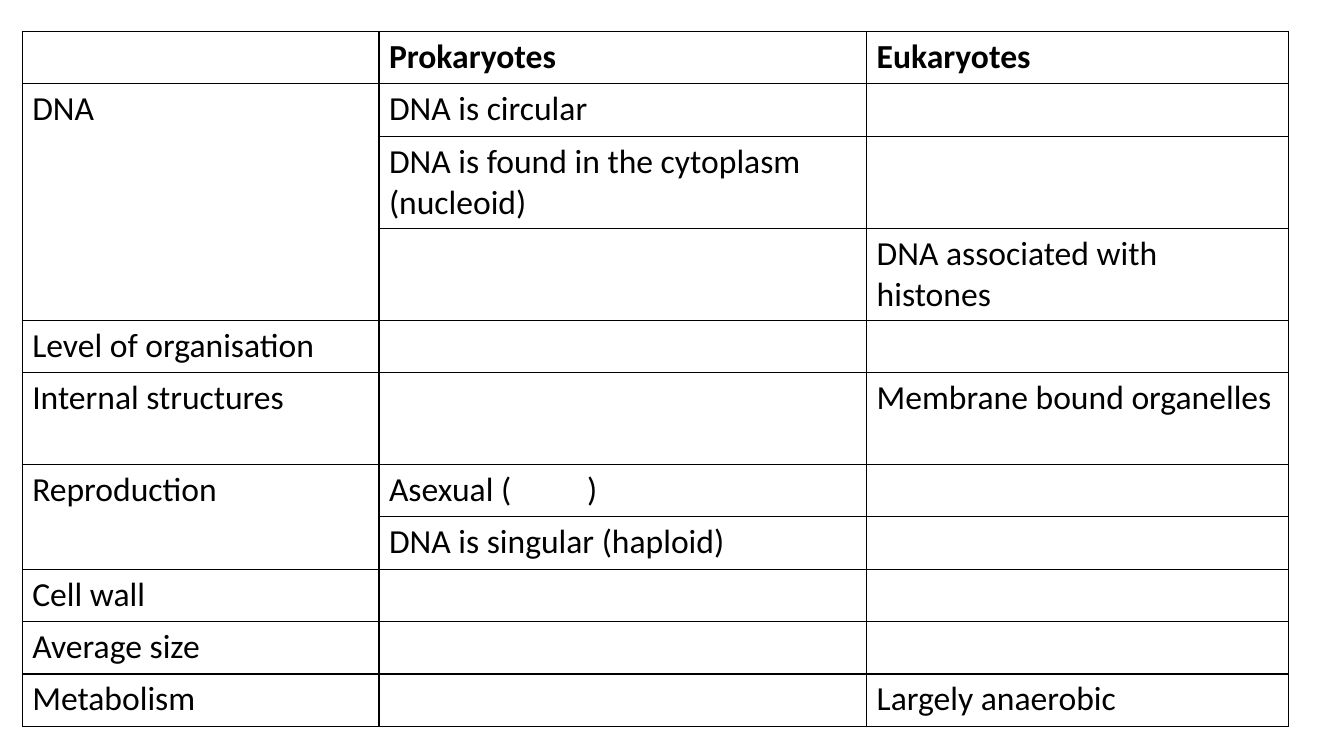
from lxml import etree
from pptx import Presentation
from pptx import util as u
from pptx.dml.color import RGBColor
from pptx.oxml import ns

COLOURS = {"ink": "000000", "paper": "FFFFFF"}
COLUMN_WIDTHS = [8.99, 12.29, 10.64]
ONE_LINE, TWO_LINES = 1.32, 2.31

# Each row: height, feature, prokaryotes, eukaryotes
COMPARISON = [
    (ONE_LINE, "", "Prokaryotes", "Eukaryotes"),
    (ONE_LINE, "DNA", "DNA is circular", ""),
    (TWO_LINES, "", "DNA is found in the cytoplasm (nucleoid)", ""),
    (TWO_LINES, "", "", "DNA associated with histones"),
    (ONE_LINE, "Level of organisation", "", ""),
    (TWO_LINES, "Internal structures", "", "Membrane bound organelles"),
    (ONE_LINE, "Reproduction", "Asexual (          )", ""),
    (ONE_LINE, "", "DNA is singular (haploid)", ""),
    (ONE_LINE, "Cell wall", "", ""),
    (ONE_LINE, "Average size", "", ""),
    (ONE_LINE, "Metabolism", "", "Largely anaerobic"),
]
FEATURE_SPANS = [(1, 3), (6, 7)]


def write(frame, wording, *, font="Calibri", size=24, bold=False, colour="ink"):
    run = frame.paragraphs[0].add_run()
    run.text = wording
    run.font.name = font
    run.font.size = u.Pt(size)
    run.font.bold = bold
    run.font.color.rgb = RGBColor.from_string(COLOURS[colour])


class SlideBuilder:
    def __init__(self, slide, border=1):
        self.slide = slide
        self.border = border

    def outline(self, cell):
        """Draw a solid line on all four sides; call before filling the cell."""
        properties = cell._tc.get_or_add_tcPr()
        for side in ("lnL", "lnR", "lnT", "lnB"):
            line = etree.SubElement(properties, ns.qn(f"a:{side}"), w=str(u.Pt(self.border)))
            fill = etree.SubElement(line, ns.qn("a:solidFill"))
            etree.SubElement(fill, ns.qn("a:srgbClr"), val=COLOURS["ink"])

    def table(self, left, top, widths, records, spans):
        """Build a grid from (height, *wordings) records, with row spans in column 0."""
        height = sum(record[0] for record in records)
        grid = self.slide.shapes.add_table(
            len(records), len(widths),
            u.Cm(left), u.Cm(top), u.Cm(sum(widths)), u.Cm(height)).table
        grid.horz_banding = False
        for column, width in zip(grid.columns, widths):
            column.width = u.Cm(width)
        for index, (row, (row_height, *wordings)) in enumerate(zip(grid.rows, records)):
            row.height = u.Cm(row_height)
            for cell, wording in zip(row.cells, wordings):
                self.outline(cell)
                cell.fill.solid()
                cell.fill.fore_color.rgb = RGBColor.from_string(COLOURS["paper"])
                if wording:
                    write(cell.text_frame, wording, bold=index == 0)
        for first, last in spans:
            grid.cell(first, 0).merge(grid.cell(last, 0))


def main():
    deck = Presentation()
    deck.slide_width, deck.slide_height = u.Cm(33.87), u.Cm(19.05)
    blank_layout = deck.slide_layouts[6]
    builder = SlideBuilder(deck.slides.add_slide(blank_layout))
    builder.table(0.56, 0.79, COLUMN_WIDTHS, COMPARISON, FEATURE_SPANS)
    deck.save("out.pptx")


if __name__ == "__main__":
    main()
